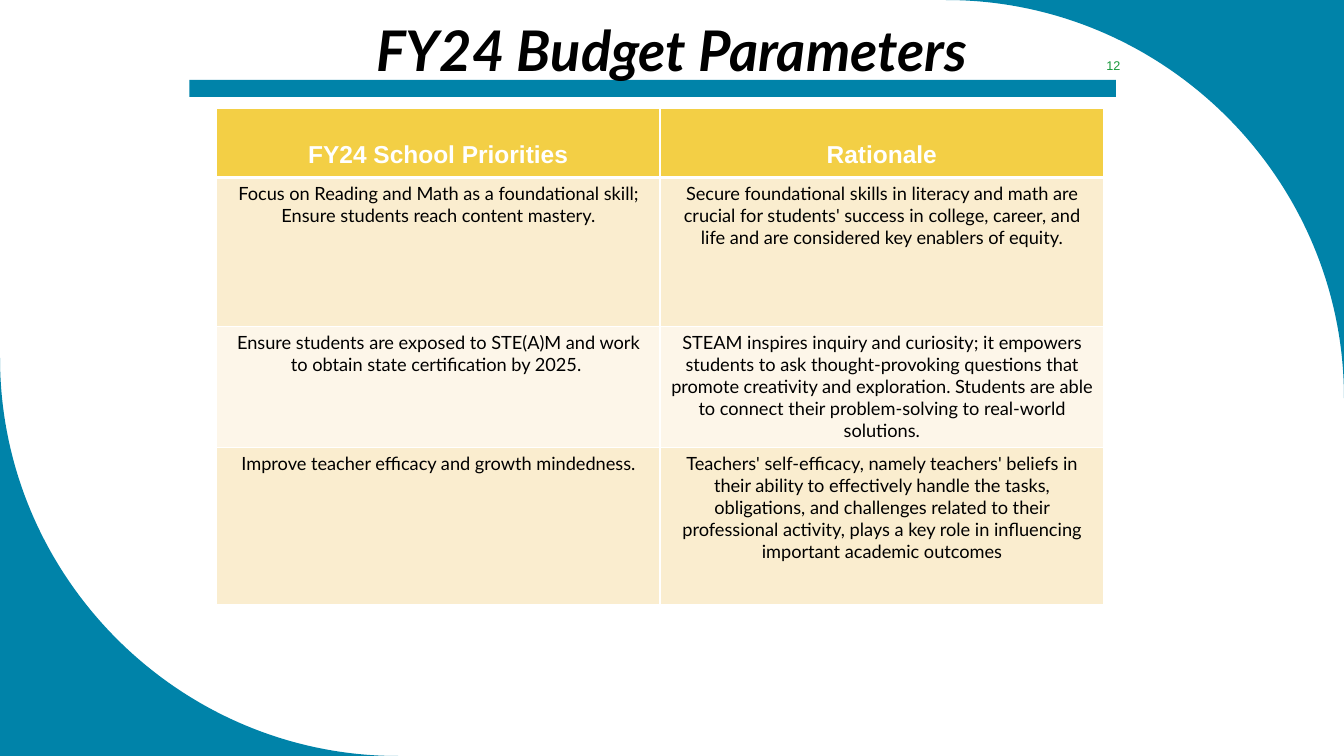
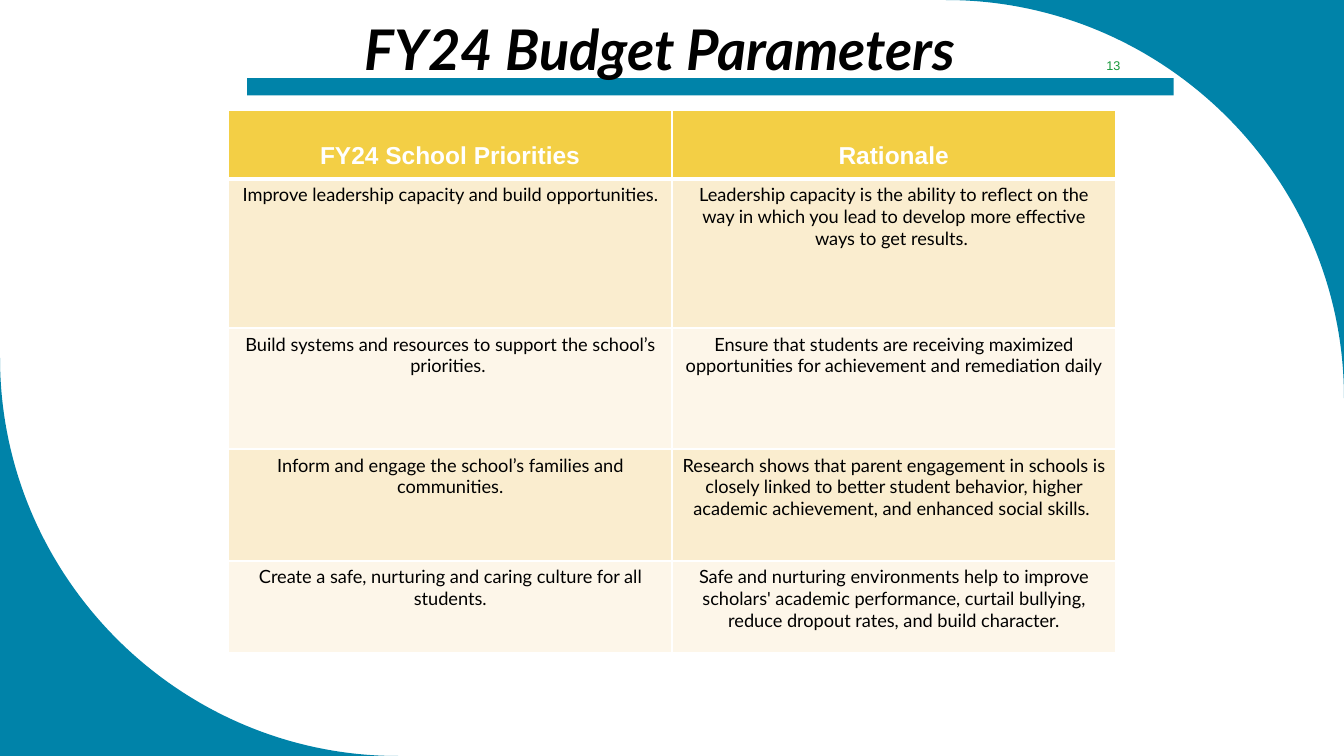
"""Build two slides of budget priorities, each with its rationale."""

from dataclasses import dataclass

from lxml import etree
from pptx import Presentation
from pptx.dml.color import RGBColor
from pptx.enum.shapes import MSO_SHAPE
from pptx.enum.text import MSO_ANCHOR, MSO_AUTO_SIZE, PP_ALIGN
from pptx.oxml.ns import qn
from pptx.slide import Slide
from pptx.table import _Cell
from pptx.text.text import TextFrame
from pptx.util import Emu, Inches, Pt

RECTANGLE = MSO_SHAPE.RECTANGLE
CENTER = PP_ALIGN.CENTER
TOP, MIDDLE, BOTTOM = MSO_ANCHOR.TOP, MSO_ANCHOR.MIDDLE, MSO_ANCHOR.BOTTOM
GROW = MSO_AUTO_SIZE.SHAPE_TO_FIT_TEXT

GRID_COLUMNS, GRID_ROWS = 160, 90
CELL = Inches(1) / 12
BLANK_LAYOUT = 6
CORNER_RADIUS = 47.4
ARC_PULL = 0.55
TABLE_COLUMN = 52.8
HEADER_ROW = 8.2
HEADER_MARGIN = 1.1
TITLE = "FY24 Budget Parameters"
HEADINGS = ("FY24 School Priorities", "Rationale")


@dataclass(frozen=True)
class Theme:
    """Colours, fonts, type sizes and line widths of the deck."""

    accent: str = "0083A9"
    header: str = "F3CF45"
    bands: tuple[str, str] = ("FAEDCF", "FDF6E9")
    rule: str = "FFFFFF"
    header_text: str = "FFFFFF"
    text: str = "000000"
    number: str = "159839"
    text_font: str = "Lato"
    label_font: str = "Arial"
    title_size: float = 40
    header_size: float = 17.5
    body_size: float = 13
    number_size: float = 9
    thin: float = 1
    thick: float = 3


THEME = Theme()


@dataclass(frozen=True)
class Box:
    """A rectangle in grid columns and rows."""

    left: float
    top: float
    width: float
    height: float

    def emu(self) -> tuple[Emu, Emu, Emu, Emu]:
        """Return the rectangle in slide units."""
        return grid(self.left), grid(self.top), grid(self.width), grid(self.height)


@dataclass(frozen=True)
class Priority:
    """One table row: a priority, its rationale and the row height."""

    goal: str
    rationale: str
    height: float


@dataclass(frozen=True)
class Page:
    """The parts in which the slides differ."""

    number: int
    title: Box
    bar: Box
    table_left: float
    table_top: float
    priorities: tuple[Priority, ...]


NUMBER_BOX = Box(127.7, 6, 9.7, 3.6)

PAGES = (
    Page(
        12, Box(38, 1.2, 83.9, 9.2), Box(22.54, 9.5, 110.3, 2.05), 25.78, 12.95,
        (
            Priority(
                "Focus on Reading and Math as a foundational skill; "
                "Ensure students reach content mastery.",
                "Secure foundational skills in literacy and math are crucial for "
                "students' success in college, career, and life and are considered "
                "key enablers of equity.",
                17.76,
            ),
            Priority(
                "Ensure students are exposed to STE(A)M and work to obtain state "
                "certification by 2025. ",
                "STEAM inspires inquiry and curiosity; it empowers students to ask "
                "thought-provoking questions that promote creativity and exploration. "
                "Students are able to connect their problem-solving to real-world "
                "solutions.",
                14.4,
            ),
            Priority(
                "Improve teacher efficacy and growth mindedness.",
                "Teachers' self-efficacy, namely teachers' beliefs in their ability to "
                "effectively handle the tasks, obligations, and challenges related to "
                "their professional activity, plays a key role in influencing "
                "important academic outcomes",
                18.65,
            ),
        ),
    ),
    Page(
        13, Box(36.6, 1.1, 83.9, 9.2), Box(29.42, 9.3, 110.3, 2.05), 27.2, 13.1,
        (
            Priority(
                "Improve leadership capacity and build opportunities.",
                "Leadership capacity is the ability to reflect on the way in which you "
                "lead to develop more effective ways to get results. ",
                17.76,
            ),
            Priority(
                "Build systems and resources to support the school’s priorities. ",
                "Ensure that students are receiving maximized opportunities for "
                "achievement and remediation daily",
                14.4,
            ),
            Priority(
                "Inform and engage the school’s families and communities.",
                "Research shows that parent engagement in schools is closely linked to "
                "better student behavior, higher academic achievement, and enhanced "
                "social skills. ",
                13.32,
            ),
            Priority(
                "Create a safe, nurturing and caring culture for all students.",
                "Safe and nurturing environments help to improve scholars' academic "
                "performance, curtail bullying, reduce dropout rates, and build "
                "character.",
                10.92,
            ),
        ),
    ),
)


def grid(cells: float) -> Emu:
    """Convert grid cells to slide units."""
    return Emu(round(cells * CELL))


def write(frame: TextFrame, text: str, *, size: float, color: str, font: str,
          bold: bool = False, italic: bool = False) -> None:
    """Put one centred, formatted paragraph in a text frame."""
    frame.word_wrap = True
    para = frame.paragraphs[0]
    para.alignment = CENTER
    span = para.add_run()
    span.text = text
    span.font.size = Pt(size)
    span.font.name = font
    span.font.bold = bold
    span.font.italic = italic
    span.font.color.rgb = RGBColor.from_string(color)


def paint(shape, color: str) -> None:
    """Give a shape a plain fill without line or shadow."""
    shape.fill.solid()
    shape.fill.fore_color.rgb = RGBColor.from_string(color)
    shape.line.fill.background()
    shape.shadow.inherit = False


def bend(shape, controls: list[tuple[Emu, Emu]]) -> None:
    """Turn the second side of a freeform into a curve with two control points."""
    side = shape._element.findall(f".//{qn('a:lnTo')}")[1]
    curve = etree.Element(qn("a:cubicBezTo"))
    for x, y in controls:
        etree.SubElement(curve, qn("a:pt"), x=str(x - shape.left), y=str(y - shape.top))
    curve.append(side[0])
    side.getparent().replace(side, curve)


def draw_corners(slide: Slide) -> None:
    """Draw the hollow-arc corners at top right and, turned round, bottom left."""
    start = GRID_COLUMNS - CORNER_RADIUS
    pull = CORNER_RADIUS * ARC_PULL
    outline = [
        (GRID_COLUMNS, 0), (start, 0), (GRID_COLUMNS, CORNER_RADIUS),
        (start + pull, 0), (GRID_COLUMNS, CORNER_RADIUS - pull),
    ]
    turned = [(GRID_COLUMNS - x, GRID_ROWS - y) for x, y in outline]
    for corner in (outline, turned):
        points = [(grid(x), grid(y)) for x, y in corner]
        builder = slide.shapes.build_freeform(*points[0])
        builder.add_line_segments(points[1:3], close=True)
        shape = builder.convert_to_shape()
        bend(shape, points[3:])
        paint(shape, THEME.accent)


def set_borders(cell: _Cell, *, top: float, bottom: float) -> None:
    """Rule the four sides of a table cell."""
    widths = {"lnL": THEME.thin, "lnR": THEME.thin, "lnT": top, "lnB": bottom}
    properties = cell._tc.get_or_add_tcPr()
    for side, width in widths.items():
        line = etree.SubElement(properties, qn(f"a:{side}"), w=str(Pt(width)))
        fill = etree.SubElement(line, qn("a:solidFill"))
        etree.SubElement(fill, qn("a:srgbClr"), val=THEME.rule)


def draw_table(slide: Slide, page: Page) -> None:
    """Draw the table of priorities with its header and banded rows."""
    texts = [HEADINGS, *((item.goal, item.rationale) for item in page.priorities)]
    heights = [HEADER_ROW, *(item.height for item in page.priorities)]
    box = Box(page.table_left, page.table_top,
              TABLE_COLUMN * len(HEADINGS), sum(heights))
    table = slide.shapes.add_table(len(texts), len(HEADINGS), *box.emu()).table
    for column in table.columns:
        column.width = grid(TABLE_COLUMN)
    for index, (row_texts, height) in enumerate(zip(texts, heights)):
        table.rows[index].height = grid(height)
        is_header = index == 0
        color = THEME.header if is_header else THEME.bands[(index - 1) % 2]
        for cell, text in zip(table.rows[index].cells, row_texts):
            set_borders(cell, top=THEME.thick if index == 1 else THEME.thin,
                        bottom=THEME.thick if is_header else THEME.thin)
            cell.fill.solid()
            cell.fill.fore_color.rgb = RGBColor.from_string(color)
            cell.vertical_anchor = BOTTOM if is_header else TOP
            if is_header:
                cell.margin_bottom = grid(HEADER_MARGIN)
            write(cell.text_frame, text,
                  size=THEME.header_size if is_header else THEME.body_size,
                  color=THEME.header_text if is_header else THEME.text,
                  font=THEME.label_font if is_header else THEME.text_font,
                  bold=is_header)


def draw_page(slide: Slide, page: Page) -> None:
    """Draw one whole slide from back to front."""
    draw_corners(slide)
    paint(slide.shapes.add_shape(RECTANGLE, *page.bar.emu()), THEME.accent)
    title = slide.shapes.add_textbox(*page.title.emu()).text_frame
    title.auto_size = GROW
    write(title, TITLE, size=THEME.title_size, color=THEME.text,
          font=THEME.text_font, bold=True, italic=True)
    draw_table(slide, page)
    number = slide.shapes.add_textbox(*NUMBER_BOX.emu()).text_frame
    number.vertical_anchor = MIDDLE
    write(number, str(page.number), size=THEME.number_size, color=THEME.number,
          font=THEME.label_font)


def main() -> None:
    """Build and save the deck."""
    deck = Presentation()
    deck.slide_width, deck.slide_height = grid(GRID_COLUMNS), grid(GRID_ROWS)
    for page in PAGES:
        draw_page(deck.slides.add_slide(deck.slide_layouts[BLANK_LAYOUT]), page)
    deck.save("out.pptx")


if __name__ == "__main__":
    main()
